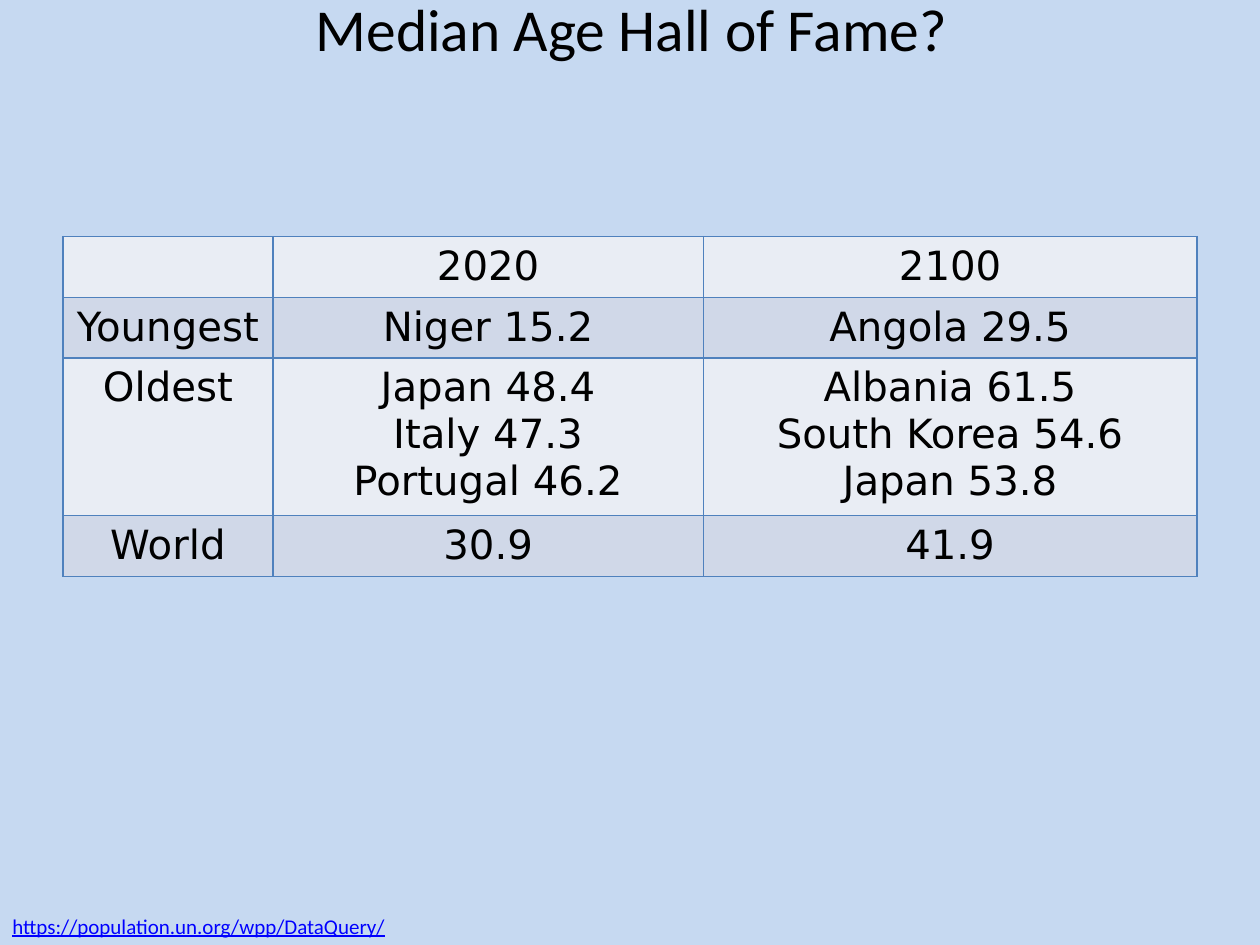
from dataclasses import dataclass

import pptx
import pptx.dml.color
import pptx.enum.text
import pptx.oxml
import pptx.oxml.ns
import pptx.util

Pt = pptx.util.Pt
CENTER = pptx.enum.text.PP_ALIGN.CENTER
BORDER_COLOR = "4F81BD"
BAND_FILLS = ("E9EDF4", "D0D8E8")
COLUMN_WIDTHS = (120, 246, 282)


@dataclass
class AgeRow:
    label: str
    in_2020: str
    in_2100: str
    height: float = 34.7


AGE_ROWS = [
    AgeRow("", "2020", "2100"),
    AgeRow("Youngest", "Niger 15.2", "Angola 29.5"),
    AgeRow(
        "Oldest",
        "Japan 48.4\nItaly 47.3\nPortugal 46.2",
        "Albania 61.5\nSouth Korea 54.6\nJapan 53.8",
        height=90,
    ),
    AgeRow("World", "30.9", "41.9"),
]


def color(hex_code: str) -> pptx.dml.color.RGBColor:
    return pptx.dml.color.RGBColor.from_string(hex_code)


def format_text(frame, font_name: str, size: float, hex_code: str, align=None) -> None:
    for paragraph in frame.paragraphs:
        paragraph.alignment = align
        for run in paragraph.runs:
            run.font.name = font_name
            run.font.size = Pt(size)
            run.font.color.rgb = color(hex_code)


def add_borders(cell) -> None:
    properties = cell._tc.get_or_add_tcPr()
    namespace = pptx.oxml.ns.nsdecls("a")
    for side in ("lnL", "lnR", "lnT", "lnB"):
        properties.append(pptx.oxml.parse_xml(
            f'<a:{side} {namespace} w="{Pt(1)}"><a:solidFill>'
            f'<a:srgbClr val="{BORDER_COLOR}"/></a:solidFill></a:{side}>'
        ))


def add_title(slide) -> None:
    title = slide.shapes.title
    title.left, title.top, title.width, title.height = Pt(171.4), Pt(-3.6), Pt(378.7), Pt(44.6)
    frame = title.text_frame
    frame.text = "Median Age Hall of Fame?"
    frame.word_wrap = False
    frame.auto_size = pptx.enum.text.MSO_AUTO_SIZE.NONE
    frame.paragraphs[0].line_spacing = 0.9
    format_text(frame, "Calibri", 34, "000000", CENTER)


def add_age_table(slide) -> None:
    table = slide.shapes.add_table(
        len(AGE_ROWS), len(COLUMN_WIDTHS), Pt(36), Pt(135.2),
        Pt(sum(COLUMN_WIDTHS)), Pt(sum(row.height for row in AGE_ROWS)),
    ).table
    for column, width in zip(table.columns, COLUMN_WIDTHS):
        column.width = Pt(width)
    for index, age_row in enumerate(AGE_ROWS):
        table.rows[index].height = Pt(age_row.height)
        entries = (age_row.label, age_row.in_2020, age_row.in_2100)
        for cell, entry in zip(table.rows[index].cells, entries):
            add_borders(cell)
            cell.fill.solid()
            cell.fill.fore_color.rgb = color(BAND_FILLS[index % 2])
            cell.text_frame.text = entry
            format_text(cell.text_frame, "DejaVu Sans", 23, "000000", CENTER)


def add_source_address(slide) -> None:
    frame = slide.shapes.add_textbox(Pt(0), Pt(518.2), Pt(570), Pt(21.8)).text_frame
    frame.word_wrap = True
    frame.text = "https://population.un.org/wpp/DataQuery/"
    format_text(frame, "Calibri", 12, "0000FF")
    frame.paragraphs[0].runs[0].font.underline = True


def main() -> None:
    presentation = pptx.Presentation()
    presentation.slide_width, presentation.slide_height = Pt(720), Pt(540)
    slide = presentation.slides.add_slide(presentation.slide_layouts[5])
    slide.background.fill.solid()
    slide.background.fill.fore_color.rgb = color("C6D9F1")
    add_title(slide)
    add_age_table(slide)
    add_source_address(slide)
    presentation.save("out.pptx")


if __name__ == "__main__":
    main()
